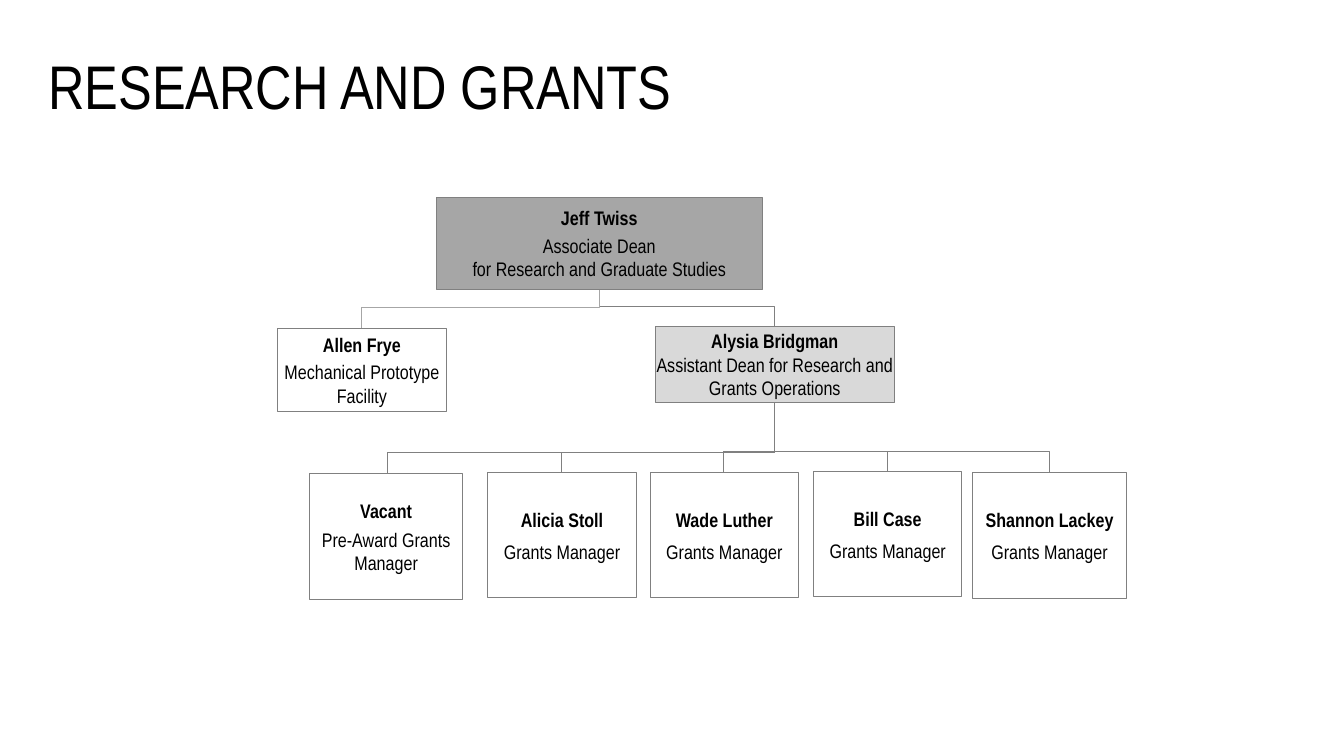
import pptx
import pptx.util
import pptx.dml.color
import pptx.enum.shapes
import pptx.enum.text

Inches = pptx.util.Inches
Pt = pptx.util.Pt
RGBColor = pptx.dml.color.RGBColor
ALIGN = pptx.enum.text.PP_ALIGN
MIDDLE = pptx.enum.text.MSO_ANCHOR.MIDDLE

FONT = "Arial Narrow"
BLACK = RGBColor(0x00, 0x00, 0x00)
WHITE = RGBColor(0xFF, 0xFF, 0xFF)
GRAY = RGBColor(0x80, 0x80, 0x80)
MID = RGBColor(0xA6, 0xA6, 0xA6)
LIGHT = RGBColor(0xD9, 0xD9, 0xD9)

deck = pptx.Presentation()
deck.slide_width = Inches(13.33)
deck.slide_height = Inches(7.5)
slide = deck.slides.add_slide(deck.slide_layouts[5])


def add_run(para, text, size, bold=False):
    run = para.add_run()
    run.text = text
    run.font.name = FONT
    run.font.size = Pt(size)
    run.font.bold = bold
    run.font.color.rgb = BLACK


title = slide.shapes.title
title.left, title.top = Inches(0.38), Inches(0.16)
title.width, title.height = Inches(11.5), Inches(1.45)
title.text_frame.vertical_anchor = MIDDLE
head = title.text_frame.paragraphs[0]
head.alignment = ALIGN.LEFT
head.line_spacing = 0.9
add_run(head, "RESEARCH AND GRANTS", 44)

# Links: parent x, parent bottom, bend y, child x, child top, colour
links = [
    (7.68, 4, 4.48, 10.41, 4.69, GRAY),
    (7.68, 4, 4.48, 8.8, 4.68, GRAY),
    (7.68, 4, 4.48, 7.18, 4.69, GRAY),
    (7.68, 4, 4.49, 5.57, 4.69, GRAY),
    (7.68, 4, 4.49, 3.84, 4.7, GRAY),
    (5.95, 2.87, 3.04, 7.68, 3.24, GRAY),
    (5.95, 2.87, 3.05, 3.59, 3.26, MID),
]
for x, y, bend, end_x, end_y, color in links:
    path = slide.shapes.build_freeform(Inches(x), Inches(y))
    points = [(x, bend), (end_x, bend), (end_x, end_y)]
    path.add_line_segments([(Inches(a), Inches(b)) for a, b in points], close=False)
    link = path.convert_to_shape()
    link.shadow.inherit = False
    link.fill.background()
    link.line.color.rgb = color
    link.line.width = Pt(0.75)

# Boxes: left, top, width, height, fill, name, role lines, space after each paragraph
boxes = [
    (4.33, 1.96, 3.23, 0.91, MID, "Jeff Twiss",
     ["Associate Dean", "for Research and Graduate Studies"], (3, 3)),
    (2.75, 3.26, 1.68, 0.82, None, "Allen Frye",
     ["Mechanical Prototype Facility"], (3, 3)),
    (6.5, 3.24, 2.37, 0.75, LIGHT, "Alysia Bridgman",
     ["Assistant Dean for Research and Grants Operations"], (0, 3)),
    (3.07, 4.7, 1.52, 1.25, None, "Vacant", ["Pre-Award Grants Manager"], (4, 4)),
    (4.84, 4.69, 1.47, 1.24, WHITE, "Alicia Stoll", ["Grants Manager"], (6, 6)),
    (6.45, 4.69, 1.47, 1.24, WHITE, "Wade Luther", ["Grants Manager"], (6, 6)),
    (8.07, 4.68, 1.47, 1.24, WHITE, "Bill Case", ["Grants Manager"], (6, 6)),
    (9.65, 4.69, 1.52, 1.25, WHITE, "Shannon Lackey", ["Grants Manager"], (6, 6)),
]
for left, top, width, height, fill, name, role, gaps in boxes:
    box = slide.shapes.add_shape(
        pptx.enum.shapes.MSO_SHAPE.RECTANGLE,
        Inches(left), Inches(top), Inches(width), Inches(height))
    box.shadow.inherit = False
    if fill is None:
        box.fill.background()
    else:
        box.fill.solid()
        box.fill.fore_color.rgb = fill
    box.line.color.rgb = GRAY
    box.line.width = Pt(0.75)

    frame = box.text_frame
    frame.word_wrap = True
    frame.vertical_anchor = MIDDLE
    frame.margin_left = frame.margin_right = Inches(0.01)
    frame.margin_top = frame.margin_bottom = Inches(0.01)
    first, second = frame.paragraphs[0], frame.add_paragraph()
    for para, gap in zip((first, second), gaps):
        para.alignment = ALIGN.CENTER
        para.space_after = Pt(gap)
    add_run(first, name, 14, bold=True)
    for i, line in enumerate(role):
        if i:
            second.add_line_break()
        add_run(second, line, 14)

deck.save("out.pptx")
